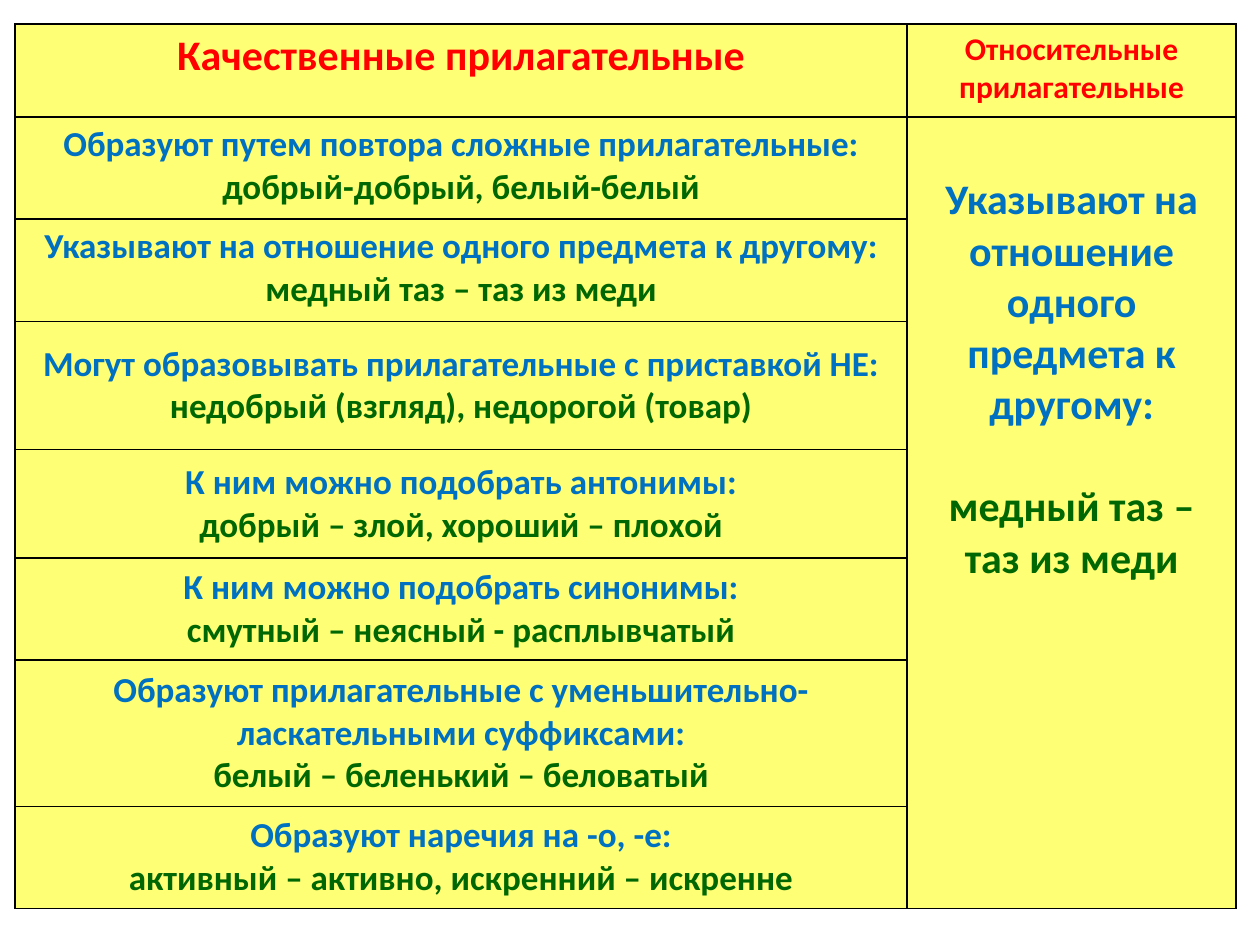
from lxml import etree
from pptx import Presentation
from pptx.dml.color import RGBColor
from pptx.enum import text as t
from pptx.oxml.ns import qn
from pptx.util import Inches, Pt

RED, BLUE, GREEN = "FF0000", "0070C0", "016703"
YELLOW, BLACK = "FFFF00", "000000"

# Content
HEADS = [("Качественные прилагательные", 24), ("Относительные прилагательные", 18)]
TRAITS = [
    ("Образуют путем повтора сложные прилагательные:", "добрый-добрый, белый-белый"),
    ("Указывают на отношение одного предмета к другому:", "медный таз – таз из меди"),
    ("Могут образовывать прилагательные с приставкой НЕ:", "недобрый (взгляд), недорогой (товар)"),
    ("К ним можно подобрать антонимы:", "добрый – злой, хороший – плохой"),
    ("К ним можно подобрать синонимы:", "смутный – неясный - расплывчатый"),
    ("Образуют прилагательные с уменьшительно-ласкательными суффиксами:",
     "белый – беленький – беловатый"),
    ("Образуют наречия на -о, -е:", "активный – активно, искренний – искренне"),
]
RELATIVE = TRAITS[1]
COLS = [7.08, 2.61]
ROWS = [0.74, 0.81, 0.81, 1.02, 0.86, 0.81, 1.16, 0.81]
TOP_ROWS = 3  # rows whose text sits at the top


def rgb(code):
    return RGBColor.from_string(code)


def write(para, words, size=20, color=BLUE, before=0):
    para.alignment = t.PP_ALIGN.CENTER
    para.space_before = Pt(before)
    run = para.add_run()
    run.text = words
    font = run.font
    font.name, font.size, font.bold = "Calibri", Pt(size), True
    font.color.rgb = rgb(color)


def pair(cell, rule, sample, size=20, gap=0):
    frame = cell.text_frame
    write(frame.paragraphs[0], rule, size=size)
    write(frame.add_paragraph(), sample, size=size, color=GREEN, before=gap)


def style(cell):
    # Translucent yellow fill
    cell.fill.solid()
    cell.fill.fore_color.rgb = rgb(YELLOW)
    props = cell._tc.get_or_add_tcPr()
    tint = props.find(".//" + qn("a:srgbClr"))
    etree.SubElement(tint, qn("a:alpha"), val="54000")
    # Thin black borders, which must come before the fill
    for i, side in enumerate(("lnL", "lnR", "lnT", "lnB")):
        line = etree.Element(qn("a:" + side), w=str(Pt(1)))
        solid = etree.SubElement(line, qn("a:solidFill"))
        etree.SubElement(solid, qn("a:srgbClr"), val=BLACK)
        props.insert(i, line)


def main():
    deck = Presentation()
    deck.slide_width, deck.slide_height = Inches(10), Inches(7.5)
    slide = deck.slides.add_slide(deck.slide_layouts[6])

    # Table grid
    grid = slide.shapes.add_table(
        len(ROWS), len(COLS), Inches(0.12), Inches(0.19),
        Inches(sum(COLS)), Inches(sum(ROWS))).table
    grid.horz_banding = False
    for col, width in zip(grid.columns, COLS):
        col.width = Inches(width)
    for row, height in zip(grid.rows, ROWS):
        row.height = Inches(height)
    for cell in grid.iter_cells():
        style(cell)

    # Heading row
    for c, (words, size) in enumerate(HEADS):
        write(grid.cell(0, c).text_frame.paragraphs[0], words, size=size, color=RED)

    # Left column
    for r, (rule, sample) in enumerate(TRAITS, 1):
        cell = grid.cell(r, 0)
        if r >= TOP_ROWS:
            cell.vertical_anchor = t.MSO_ANCHOR.MIDDLE
        pair(cell, rule, sample)

    # Right column, one tall cell
    tall = grid.cell(1, 1)
    tall.merge(grid.cell(len(TRAITS), 1))
    tall.margin_top = Inches(0.46)
    pair(tall, *RELATIVE, size=24, gap=29)

    deck.save("out.pptx")


if __name__ == "__main__":
    main()
